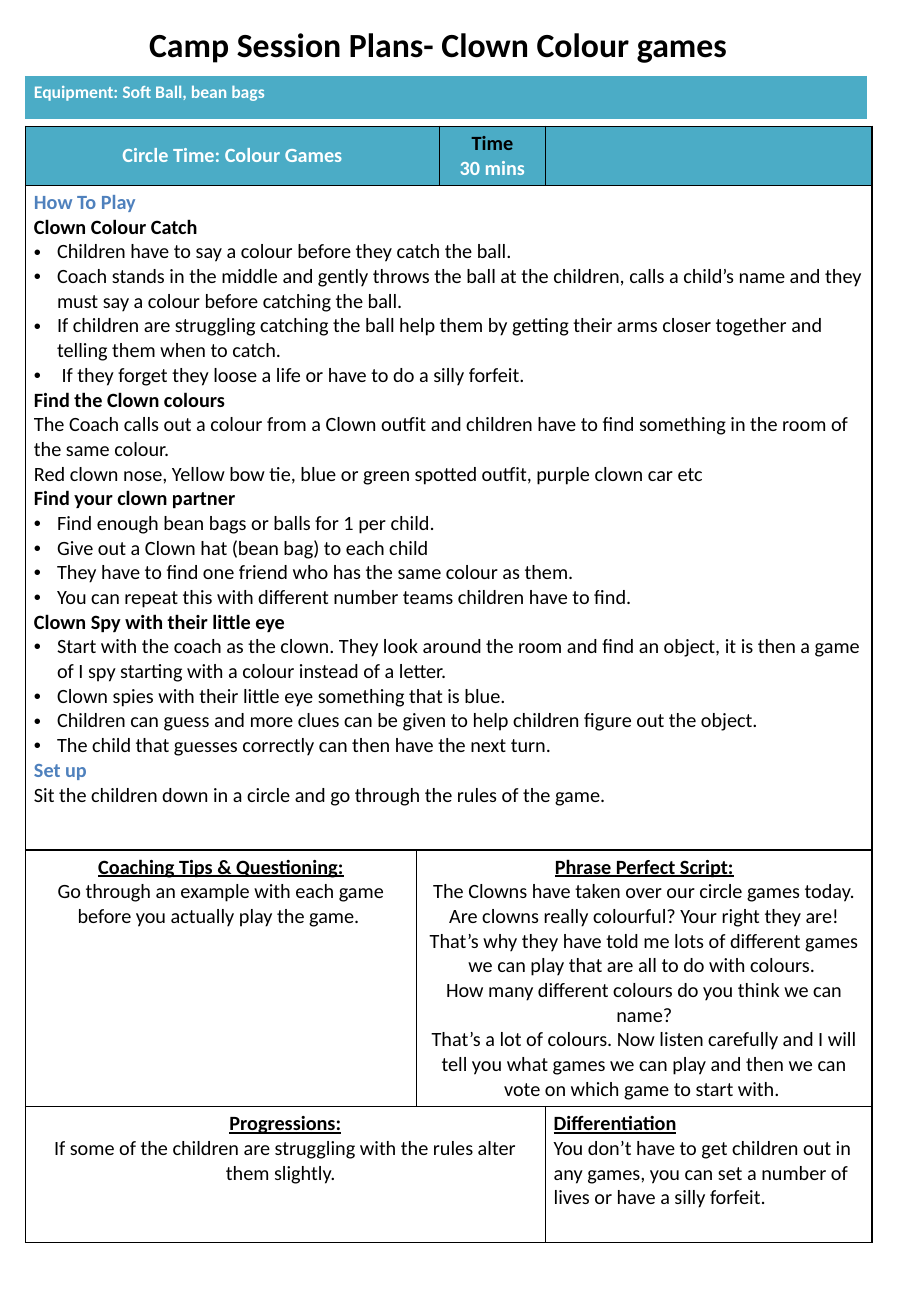
import pptx
import pptx.util
import pptx.dml.color
import pptx.enum.text
import pptx.oxml
import pptx.oxml.ns
import lxml.etree
from dataclasses import dataclass

Inches = pptx.util.Inches
Pt = pptx.util.Pt
RGBColor = pptx.dml.color.RGBColor
CENTER = pptx.enum.text.PP_ALIGN.CENTER
LEFT = pptx.enum.text.PP_ALIGN.LEFT
MIDDLE = pptx.enum.text.MSO_ANCHOR.MIDDLE
TOP = pptx.enum.text.MSO_ANCHOR.TOP
qn = pptx.oxml.ns.qn


@dataclass
class Theme:
    font: str = "Calibri"
    black: str = "000000"
    white: str = "FFFFFF"
    blue: str = "4F81BD"
    teal: str = "4BACC6"
    title_size: float = 20
    body_size: float = 12
    equipment_size: float = 10.5


theme = Theme()
STYLES = {
    "title": (theme.title_size, theme.black, True, False),
    "equipment": (theme.equipment_size, theme.white, True, False),
    "header": (theme.body_size, theme.white, True, False),
    "section": (theme.body_size, theme.blue, True, False),
    "game": (theme.body_size, theme.black, True, False),
    "underlined": (theme.body_size, theme.black, True, True),
    "body": (theme.body_size, theme.black, False, False),
    "bullet": (theme.body_size, theme.black, False, False),
}


def write(text_frame, lines, alignment=LEFT):
    for index, (style, text) in enumerate(lines):
        paragraph = text_frame.add_paragraph() if index else text_frame.paragraphs[0]
        paragraph.alignment = alignment
        if style == "bullet":
            properties = paragraph._p.get_or_add_pPr()
            properties.set("marL", str(Inches(0.19)))
            properties.set("indent", str(-Inches(0.19)))
            lxml.etree.SubElement(properties, qn("a:buFont")).set("typeface", "Arial")
            lxml.etree.SubElement(properties, qn("a:buChar")).set("char", "•")
        run = paragraph.add_run()
        run.text = text
        size, color, bold, underline = STYLES[style]
        run.font.name = theme.font
        run.font.size = Pt(size)
        run.font.color.rgb = RGBColor.from_string(color)
        run.font.bold = bold
        run.font.underline = underline


def add_plain_table(slide, left, top, widths, heights, border):
    shape = slide.shapes.add_table(len(heights), len(widths), Inches(left), Inches(top),
                                   Inches(sum(widths)), Inches(sum(heights)))
    table = shape.table
    table.first_row = table.horz_banding = False
    for column, width in zip(table.columns, widths):
        column.width = Inches(width)
    for row, height in zip(table.rows, heights):
        row.height = Inches(height)
    for cell in table.iter_cells():
        cell.margin_left = cell.margin_right = Inches(0.07)
        cell.margin_top = cell.margin_bottom = Inches(0.04)
        properties = cell._tc.get_or_add_tcPr()
        for side in ("a:lnL", "a:lnR", "a:lnT", "a:lnB"):
            line = lxml.etree.SubElement(properties, qn(side), w=str(Pt(1)))
            fill = lxml.etree.SubElement(line, qn("a:solidFill"))
            lxml.etree.SubElement(fill, qn("a:srgbClr")).set("val", border)
        cell.fill.background()
    return table


presentation = pptx.Presentation()
presentation.slide_width = Inches(7.5)
presentation.slide_height = Inches(10.83)
slide = presentation.slides.add_slide(presentation.slide_layouts[5])

title = slide.shapes.title
title.left, title.top = Inches(0.18), Inches(0.14)
title.width, title.height = Inches(6.92), Inches(0.44)
write(title.text_frame, [("title", "Camp Session Plans- Clown Colour games ")], CENTER)

plan = add_plain_table(slide, 0.21, 1.04, [3.22, 0.19, 0.87, 2.69],
                       [0.47, 5.47, 2.08, 1.12], theme.black)
how_to_play = [
    ("section", "How To Play"),
    ("game", "Clown Colour Catch"),
    ("bullet", "Children have to say a colour before they catch the ball."),
    ("bullet", "Coach stands in the middle and gently throws the ball at the children, calls a child’s name and they must say a colour before catching the ball."),
    ("bullet", "If children are struggling catching the ball help them by getting their arms closer together and telling them when to catch."),
    ("bullet", " If they forget they loose a life or have to do a silly forfeit."),
    ("game", "Find the Clown colours"),
    ("body", "The Coach calls out a colour from a Clown outfit and children have to find something in the room of the same colour."),
    ("body", "Red clown nose, Yellow bow tie, blue or green spotted outfit, purple clown car etc"),
    ("game", "Find your clown partner"),
    ("bullet", "Find enough bean bags or balls for 1 per child."),
    ("bullet", "Give out a Clown hat (bean bag) to each child"),
    ("bullet", "They have to find one friend who has the same colour as them."),
    ("bullet", "You can repeat this with different number teams children have to find."),
    ("game", "Clown Spy with their little eye"),
    ("bullet", "Start with the coach as the clown. They look around the room and find an object, it is then a game of I spy starting with a colour instead of a letter."),
    ("bullet", "Clown spies with their little eye something that is blue."),
    ("bullet", "Children can guess and more clues can be given to help children figure out the object."),
    ("bullet", "The child that guesses correctly can then have the next turn."),
    ("section", "Set up"),
    ("body", "Sit the children down in a circle and go through the rules of the game."),
]
coaching_tips = [
    ("underlined", "Coaching Tips & Questioning:"),
    ("body", "Go through an example with each game before you actually play the game. "),
]
script = [
    ("underlined", "Phrase Perfect Script:"),
    ("body", "The Clowns have taken over our circle games today. Are clowns really colourful? Your right they are! That’s why they have told me lots of different games we can play that are all to do with colours. "),
    ("body", "How many different colours do you think we can name?"),
    ("body", "That’s a lot of colours. Now listen carefully and I will tell you what games we can play and then we can vote on which game to start with. "),
]
progressions = [
    ("underlined", "Progressions:"),
    ("body", "If some of the children are struggling with the rules alter them slightly.  "),
]
differentiation = [
    ("underlined", "Differentiation"),
    ("body", "You don’t have to get children out in any games, you can set a number of lives or have a silly forfeit."),
]
sections = [
    (0, 0, 1, CENTER, [("header", "Circle Time: Colour Games")]),
    (0, 2, 2, CENTER, [("game", "Time"), ("header", "30 mins")]),
    (0, 3, 3, CENTER, []),
    (1, 0, 3, LEFT, how_to_play),
    (2, 0, 0, CENTER, coaching_tips),
    (2, 1, 3, CENTER, script),
    (3, 0, 2, CENTER, progressions),
    (3, 3, 3, LEFT, differentiation),
]
for row, first, last, alignment, lines in sections:
    cell = plan.cell(row, first)
    if last > first:
        cell.merge(plan.cell(row, last))
    cell.vertical_anchor = TOP if row else MIDDLE
    if row == 0:
        cell.fill.solid()
        cell.fill.fore_color.rgb = RGBColor.from_string(theme.teal)
    write(cell.text_frame, lines, alignment)

equipment = add_plain_table(slide, 0.21, 0.63, [6.92], [0.34], theme.teal).cell(0, 0)
equipment.fill.solid()
equipment.fill.fore_color.rgb = RGBColor.from_string(theme.teal)
write(equipment.text_frame, [("equipment", "Equipment: Soft Ball, bean bags")])

presentation.save("out.pptx")
